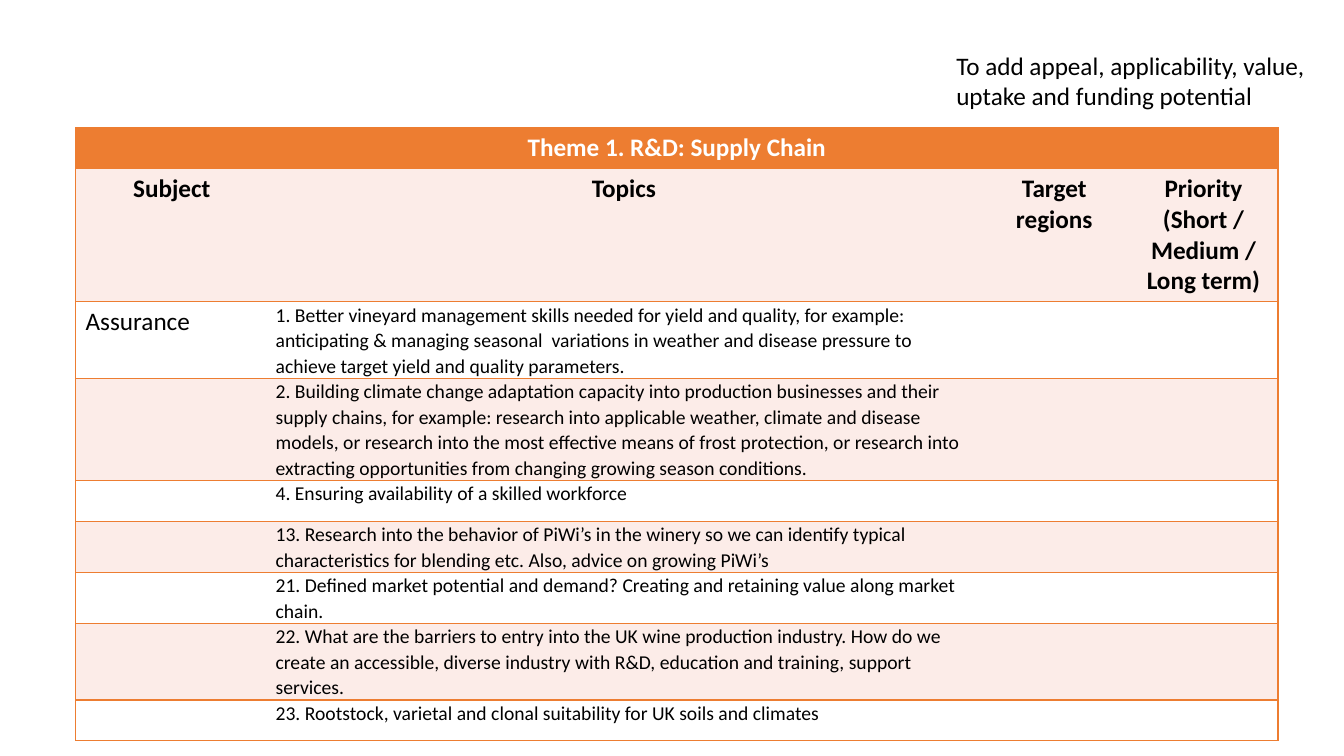
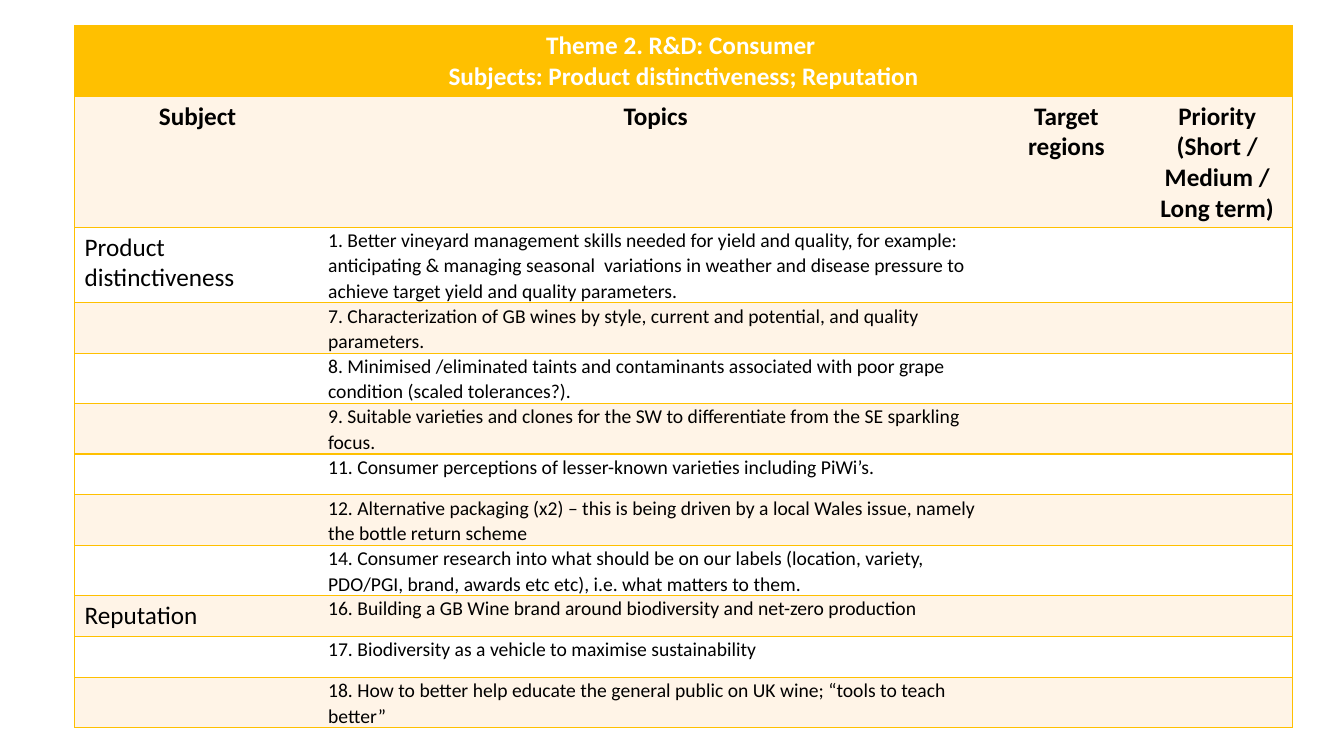
from lxml.etree import SubElement
from pptx import Presentation
from pptx.dml.color import RGBColor
from pptx.enum.text import MSO_AUTO_SIZE as AutoSize, PP_ALIGN as Align
from pptx.oxml.ns import qn
from pptx.util import Pt

HEADINGS = ["Subject", "Topics", "Target regions", "Priority (Short / Medium / Long term)"]
VINEYARD_SKILLS = (
    "1. Better vineyard management skills needed for yield and quality, for example: "
    "anticipating & managing seasonal  variations in weather and disease pressure to "
    "achieve target yield and quality parameters."
)
SUPPLY_CHAIN = [
    ("Assurance", VINEYARD_SKILLS, 3),
    ("", "2. Building climate change adaptation capacity into production businesses and their "
         "supply chains, for example: research into applicable weather, climate and disease "
         "models, or research into the most effective means of frost protection, or research "
         "into extracting opportunities from changing growing season conditions.", 4),
    ("", "4. Ensuring availability of a skilled workforce", 1),
    ("", "13. Research into the behavior of PiWi’s in the winery so we can identify typical "
         "characteristics for blending etc. Also, advice on growing PiWi’s", 2),
    ("", "21. Defined market potential and demand? Creating and retaining value along market "
         "chain.", 2),
    ("", "22. What are the barriers to entry into the UK wine production industry. How do we "
         "create an accessible, diverse industry with R&D, education and training, support "
         "services.", 3),
    ("", "23. Rootstock, varietal and clonal suitability for UK soils and climates", 1),
]
CONSUMER = [
    ("Product distinctiveness", VINEYARD_SKILLS, 3),
    ("", "7. Characterization of GB wines by style, current and potential, and quality "
         "parameters.", 2),
    ("", "8. Minimised /eliminated taints and contaminants associated with poor grape "
         "condition (scaled tolerances?).", 2),
    ("", "9. Suitable varieties and clones for the SW to differentiate from the SE sparkling "
         "focus.", 2),
    ("", "11. Consumer perceptions of lesser-known varieties including PiWi’s.", 1),
    ("", "12. Alternative packaging (x2) – this is being driven by a local Wales issue, namely "
         "the bottle return scheme", 2),
    ("", "14. Consumer research into what should be on our labels (location, variety, "
         "PDO/PGI, brand, awards etc etc), i.e. what matters to them.", 2),
    ("Reputation", "16. Building a GB Wine brand around biodiversity and net-zero production", 1),
    ("", "17. Biodiversity as a vehicle to maximise sustainability", 1),
    ("", "18. How to better help educate the general public on UK wine; “tools to teach "
         "better”", 2),
]


def color(value):
    return RGBColor.from_string(value)


class ThemeDeck:
    font = "Calibri"
    ink = "000000"
    paper = "FFFFFF"
    body_size = 18
    topic_size = 14
    topic_spacing = 1.07
    topic_inset = 5.4
    minimum_row = 29.2

    def __init__(self):
        self.deck = Presentation()
        self.deck.slide_width = Pt(960)
        self.deck.slide_height = Pt(540)
        self.slide = None

    def add_slide(self):
        self.slide = self.deck.slides.add_slide(self.deck.slide_layouts[6])

    def add_lines(self, frame, lines, size=body_size, ink=ink, bold=False, align=Align.LEFT, spacing=None):
        for index, line in enumerate(lines):
            para = frame.paragraphs[0] if index == 0 else frame.add_paragraph()
            para.alignment = align
            if spacing:
                para.line_spacing = spacing
            span = para.add_run()
            span.text = line
            span.font.name = self.font
            span.font.size = Pt(size)
            span.font.bold = bold
            span.font.color.rgb = color(ink)

    def note(self, left, top, width, height, lines):
        box = self.slide.shapes.add_textbox(Pt(left), Pt(top), Pt(width), Pt(height))
        box.text_frame.word_wrap = False
        box.text_frame.auto_size = AutoSize.SHAPE_TO_FIT_TEXT
        self.add_lines(box.text_frame, lines)

    def style_cell(self, cell, fill, edges, accent):
        properties = cell._tc.get_or_add_tcPr()
        for edge in "LRTB":
            line = SubElement(properties, qn(f"a:ln{edge}"), w=str(Pt(1)))
            if edge in edges:
                solid = SubElement(line, qn("a:solidFill"))
                SubElement(solid, qn("a:srgbClr"), val=accent)
            else:
                SubElement(line, qn("a:noFill"))
        cell.fill.solid()
        cell.fill.fore_color.rgb = color(fill)

    def text_height(self, lines):
        return max(self.minimum_row, 7.2 + 21.6 * lines)

    def theme_table(self, left, top, widths, title, topics, accent, tint):
        heights = [self.text_height(len(title)), self.text_height(4)]
        heights += [max(self.minimum_row, 18 * lines) for _, _, lines in topics]
        table = self.slide.shapes.add_table(
            len(heights), len(widths), Pt(left), Pt(top), Pt(sum(widths)), Pt(sum(heights))
        ).table
        for column, width in zip(table.columns, widths):
            column.width = Pt(width)
        last = len(widths) - 1
        for index, height in enumerate(heights):
            table.rows[index].height = Pt(height)
            fill = accent if index == 0 else tint if index % 2 else self.paper
            for position in range(len(widths)):
                sides = "LR" if index == 0 else {0: "L", last: "R"}.get(position, "")
                self.style_cell(table.cell(index, position), fill, sides + "TB", accent)

        banner = table.cell(0, 0)
        banner.merge(table.cell(0, last))
        self.add_lines(banner.text_frame, title, ink=self.paper, bold=True, align=Align.CENTER)
        for position, heading in enumerate(HEADINGS):
            self.add_lines(table.cell(1, position).text_frame, [heading], bold=True, align=Align.CENTER)
        for index, (subject, topic, _) in enumerate(topics, 2):
            if subject:
                self.add_lines(table.cell(index, 0).text_frame, [subject])
            cell = table.cell(index, 1)
            cell.margin_left = cell.margin_right = Pt(self.topic_inset)
            cell.margin_top = cell.margin_bottom = Pt(0)
            self.add_lines(cell.text_frame, [topic], size=self.topic_size, spacing=self.topic_spacing)


def main():
    themes = ThemeDeck()

    themes.add_slide()
    themes.theme_table(
        54, 91.2, [137.5, 508.3, 106.6, 106.6],
        ["Theme 1. R&D: Supply Chain"], SUPPLY_CHAIN, "ED7D31", "FCECE8",
    )
    themes.note(
        676, 32.4, 270.7, 51,
        ["To add appeal, applicability, value,", "uptake and funding potential"],
    )

    themes.add_slide()
    themes.theme_table(
        53.3, 18.2, [175.7, 478.8, 107.8, 107.8],
        ["Theme 2. R&D: Consumer ", "Subjects: Product distinctiveness; Reputation"],
        CONSUMER, "FFC000", "FFF4E7",
    )

    themes.deck.save("out.pptx")


if __name__ == "__main__":
    main()
